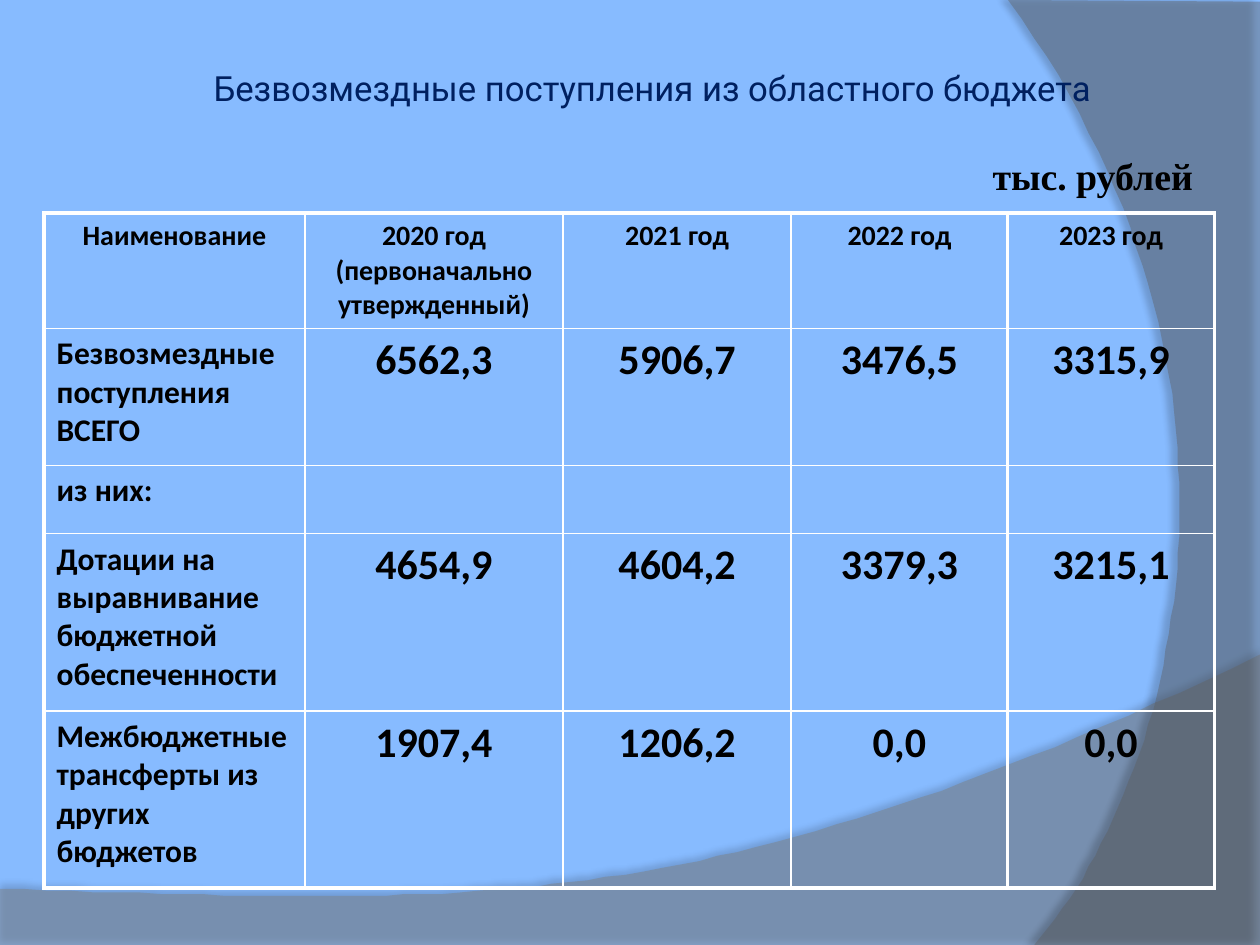
from lxml import etree
from pptx import Presentation
from pptx.dml import color
from pptx.enum import text
from pptx.oxml import ns, parse_xml
from pptx.util import Pt

WHITE, BLACK = "FFFFFF", "000000"
ROWS = [
    ["Наименование", "2020 год (первоначально утвержденный)", "2021 год", "2022 год", "2023 год"],
    ["Безвозмездные поступления ВСЕГО", "6562,3", "5906,7", "3476,5", "3315,9"],
    ["из них:", "", "", "", ""],
    ["Дотации на выравнивание бюджетной обеспеченности", "4654,9", "4604,2", "3379,3", "3215,1"],
    ["Межбюджетные трансферты из других бюджетов", "1907,4", "1206,2", "0,0", "0,0"],
]
WIDTHS = [149, 147.6, 130.3, 123.8, 118.1]
HEIGHTS = [64.1, 78.5, 38.9, 101.3, 101.3]


def paint(fill, tone):
    fill.solid()
    fill.fore_color.rgb = color.RGBColor.from_string(tone)


def style(par, name, size, tone, bold, align):
    par.alignment = align
    par.font.name = name
    par.font.size = Pt(size)
    par.font.bold = bold
    par.font.color.rgb = color.RGBColor.from_string(tone)


def curve(a, b, c, d, steps=60):
    for i in range(1, steps + 1):
        t = i / steps
        s = 1 - t
        yield tuple(s**3 * p + 3 * s * s * t * q + 3 * s * t * t * r + t**3 * e
                    for p, q, r, e in zip(a, b, c, d))


def swoosh(slide, box, edge, bend, tone, alpha, shade):
    left, top = box
    spots = edge + list(curve(edge[-1], *bend))
    spots = [(left + x, top + y) for x, y in spots]
    form = slide.shapes.build_freeform(*spots[0], scale=Pt(1))
    form.add_line_segments(spots[1:], close=True)
    shape = form.convert_to_shape()
    paint(shape.fill, tone)
    shape.line.fill.background()
    tint = shape.fill._xPr.find(ns.qn("a:solidFill"))[0]
    etree.SubElement(tint, ns.qn("a:alpha"), val=str(alpha * 1000))
    dark, blur, dist, turn = shade
    shape._element.spPr.append(parse_xml(
        f'<a:effectLst {ns.nsdecls("a")}><a:outerShdw blurRad="{Pt(blur)}" '
        f'dist="{Pt(dist)}" dir="{turn * 60000}" algn="ctr" rotWithShape="0">'
        f'<a:srgbClr val="{BLACK}"><a:alpha val="{dark * 1000}"/></a:srgbClr>'
        '</a:outerShdw></a:effectLst>'))


def label(slide, box, words, name, size, tone, bold, align):
    frame = slide.shapes.add_textbox(*map(Pt, box)).text_frame
    frame.word_wrap = True
    frame.vertical_anchor = text.MSO_ANCHOR.MIDDLE
    frame.margin_left = frame.margin_right = Pt(3.6)
    frame.text = words
    style(frame.paragraphs[0], name, size, tone, bold, align)


def border(cell, sides):
    props = cell._tc.get_or_add_tcPr()
    for spot, (side, width) in enumerate(sides.items()):
        props.insert(spot, parse_xml(
            f'<a:ln{side} {ns.nsdecls("a")} w="{Pt(width)}"><a:solidFill>'
            f'<a:srgbClr val="{WHITE}"/></a:solidFill></a:ln{side}>'))


def grid(slide, box):
    last, end = len(ROWS) - 1, len(WIDTHS) - 1
    table = slide.shapes.add_table(last + 1, end + 1, *map(Pt, box)).table
    table.first_row = table.horz_banding = False
    for col, width in zip(table.columns, WIDTHS):
        col.width = Pt(width)
    for row, height in zip(table.rows, HEIGHTS):
        row.height = Pt(height)
    for r, line in enumerate(ROWS):
        for c, words in enumerate(line):
            cell = table.cell(r, c)
            cell.fill.background()
            cell.text = words
            size = 16 if r == 0 else 18 if c == 0 or not words else 24
            side = text.PP_ALIGN.LEFT if r and c == 0 else text.PP_ALIGN.CENTER
            style(cell.text_frame.paragraphs[0], "Calibri", size, BLACK, True, side)
            border(cell, {
                "L": 2.25 if c in (0, end) else 1,
                "R": 2.25 if c >= end - 1 else 1,
                "T": 2.25 if r == 0 else 1,
                "B": 2.25 if r == last else 1,
            })


def main():
    deck = Presentation()
    deck.slide_width, deck.slide_height = Pt(720), Pt(540)
    slide = deck.slides.add_slide(deck.slide_layouts[6])
    paint(slide.background.fill, "87BBFF")
    swoosh(slide, (0, 374.4), [(0, 133.2), (0, 166.3), (720, 166.3), (720, 0)],
           [(402.5, 150.5), (281.5, 143.3), (0, 133.2)], "7F7F7F", 45, (35, 4, 3.5, 270))
    swoosh(slide, (576, 0), [(144, 1.4), (144, 540), (15.1, 540)],
           [(97.2, 445.7), (157, 216), (0, 0)], "5E5E5E", 40, (45, 4, 4, 180))
    grid(slide, (25.2, 121.7, 668.8, 384.1))
    label(slide, (25.2, 32, 694.8, 36), "Безвозмездные поступления из областного бюджета",
          "Roboto", 19.8, "002060", False, text.PP_ALIGN.CENTER)
    label(slide, (485.3, 82, 200, 36), "тыс. рублей",
          "Times New Roman", 21.6, BLACK, True, text.PP_ALIGN.RIGHT)
    deck.save("out.pptx")


if __name__ == "__main__":
    main()
